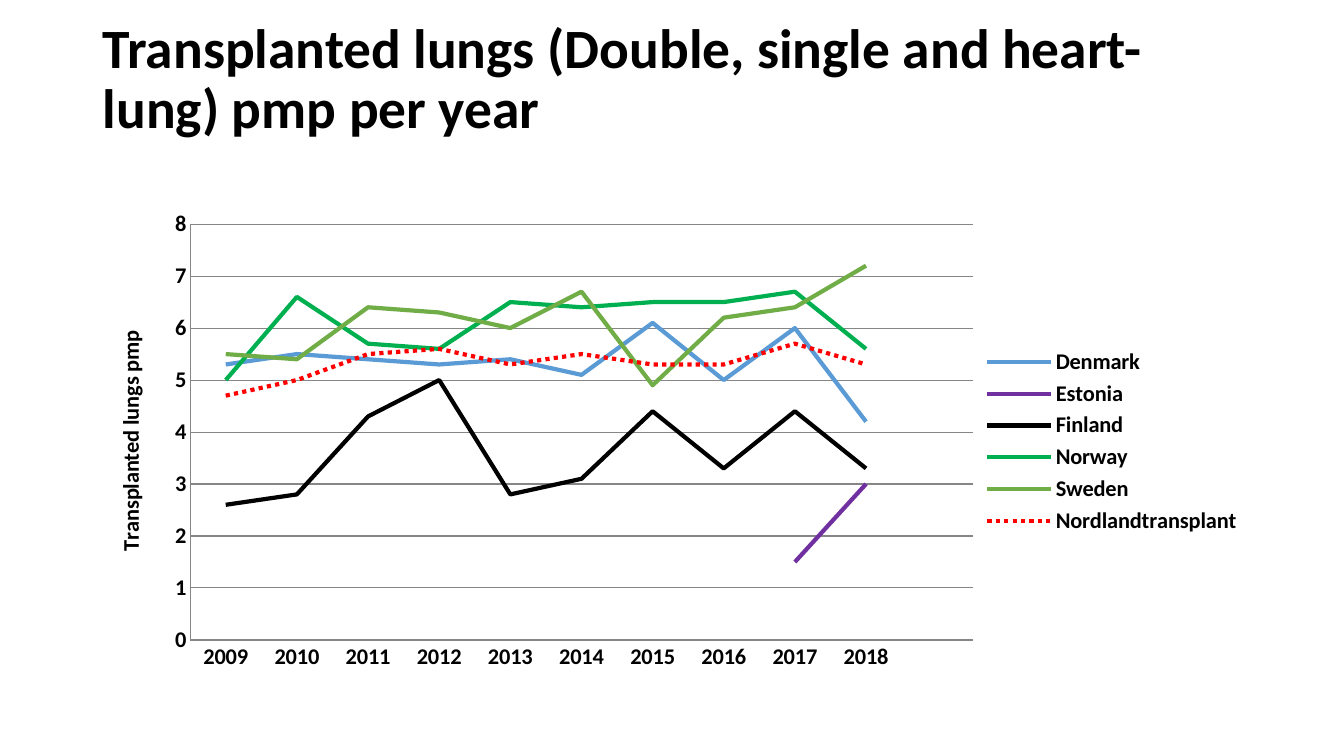
from lxml import etree
from pptx import Presentation
from pptx.chart.data import CategoryChartData
from pptx.dml.color import RGBColor
from pptx.enum.chart import XL_CHART_TYPE, XL_LEGEND_POSITION, XL_TICK_MARK
from pptx.enum.dml import MSO_LINE
from pptx.enum.text import MSO_ANCHOR, MSO_AUTO_SIZE, PP_ALIGN
from pptx.util import Inches, Pt

LINE = XL_CHART_TYPE.LINE
RIGHT = XL_LEGEND_POSITION.RIGHT
NO_TICK = XL_TICK_MARK.NONE
DOTTED = MSO_LINE.ROUND_DOT
MIDDLE = MSO_ANCHOR.MIDDLE
NO_FIT = MSO_AUTO_SIZE.NONE
LEFT = PP_ALIGN.LEFT

TITLE = "Transplanted lungs (Double, single and heart-lung) pmp per year\v"
AXIS = "Transplanted lungs pmp"
YEARS = [str(year) for year in range(2009, 2019)] + [""]
SERIES = {
    "Denmark": [5.3, 5.5, 5.4, 5.3, 5.4, 5.1, 6.1, 5, 6, 4.2, None],
    "Estonia": [None] * 8 + [1.5, 3, None],
    "Finland": [2.6, 2.8, 4.3, 5, 2.8, 3.1, 4.4, 3.3, 4.4, 3.3, None],
    "Norway": [5, 6.6, 5.7, 5.6, 6.5, 6.4, 6.5, 6.5, 6.7, 5.6, None],
    "Sweden": [5.5, 5.4, 6.4, 6.3, 6, 6.7, 4.9, 6.2, 6.4, 7.2, None],
    "Nordlandtransplant": [4.7, 5, 5.5, 5.6, 5.3, 5.5, 5.3, 5.3, 5.7, 5.3, None],
}
TOTAL = "Nordlandtransplant"

THEME = {
    "font": "Calibri",
    "text": "000000",
    "grid": "868686",
    "lines": ["5B9BD5", "7030A0", "000000", "00B050", "70AD47", "FF0000"],
    "title": 39.6,
    "label": 16,
    "stroke": 3,
    "hair": 0.75,
}
SIZE = (13.33, 7.5)
HEAD = (0.92, 0.4, 11.5, 1.45)
GRAPH = (0.92, 2, 11.5, 4.76)
PLOT = {"x": 0.084, "y": 0.047, "w": 0.675, "h": 0.867}


def apply(target, values):
    for name, value in values.items():
        setattr(target, name, value)


def style(font, size):
    apply(font, {"name": THEME["font"], "size": Pt(size), "bold": True})
    font.color.rgb = RGBColor.from_string(THEME["text"])


def stroke(line, color, width):
    line.color.rgb = RGBColor.from_string(color)
    line.width = Pt(width)


def place(chart):
    plot = next(node for node in chart.element.iter() if node.tag.endswith("}plotArea"))
    space = plot.tag.split("}")[0] + "}"
    for old in plot.findall(space + "layout"):
        plot.remove(old)
    layout = etree.Element(space + "layout")
    manual = etree.SubElement(layout, space + "manualLayout")
    modes = {"layoutTarget": "inner", "xMode": "edge", "yMode": "edge"}
    for name, value in {**modes, **PLOT}.items():
        etree.SubElement(manual, space + name).set("val", str(value))
    plot.insert(0, layout)


def add_title(slide):
    title = slide.shapes.title
    apply(title, dict(zip(("left", "top", "width", "height"), map(Inches, HEAD))))
    frame = title.text_frame
    frame.text = TITLE
    apply(frame, {"word_wrap": True, "auto_size": NO_FIT, "vertical_anchor": MIDDLE})
    para = frame.paragraphs[0]
    apply(para, {"alignment": LEFT, "line_spacing": 0.9})
    style(para.font, THEME["title"])
    for run in para.runs:
        style(run.font, THEME["title"])


def add_graph(slide):
    data = CategoryChartData()
    data.categories = YEARS
    for name, values in SERIES.items():
        data.add_series(name, values)
    chart = slide.shapes.add_chart(LINE, *map(Inches, GRAPH), data).chart
    style(chart.font, THEME["label"])
    apply(chart, {"has_title": False, "has_legend": True})
    apply(chart.legend, {"position": RIGHT, "include_in_layout": False})
    chart.plots[0].vary_by_categories = False

    for series, color in zip(chart.plots[0].series, THEME["lines"]):
        series.smooth = False
        stroke(series.format.line, color, THEME["stroke"])
        if series.name == TOTAL:
            series.format.line.dash_style = DOTTED

    years, scale = chart.category_axis, chart.value_axis
    for axis in (years, scale):
        apply(axis, {"major_tick_mark": NO_TICK, "minor_tick_mark": NO_TICK})
        stroke(axis.format.line, THEME["grid"], THEME["hair"])
    apply(scale, {"minimum_scale": 0, "maximum_scale": 8, "major_unit": 1,
                  "has_major_gridlines": True, "has_title": True})
    stroke(scale.major_gridlines.format.line, THEME["grid"], THEME["hair"])
    label = scale.axis_title.text_frame
    label.text = AXIS
    style(label.paragraphs[0].runs[0].font, THEME["label"])
    place(chart)


def main():
    deck = Presentation()
    deck.slide_width, deck.slide_height = map(Inches, SIZE)
    slide = deck.slides.add_slide(deck.slide_layouts[5])
    add_title(slide)
    add_graph(slide)
    deck.save("out.pptx")


if __name__ == "__main__":
    main()
